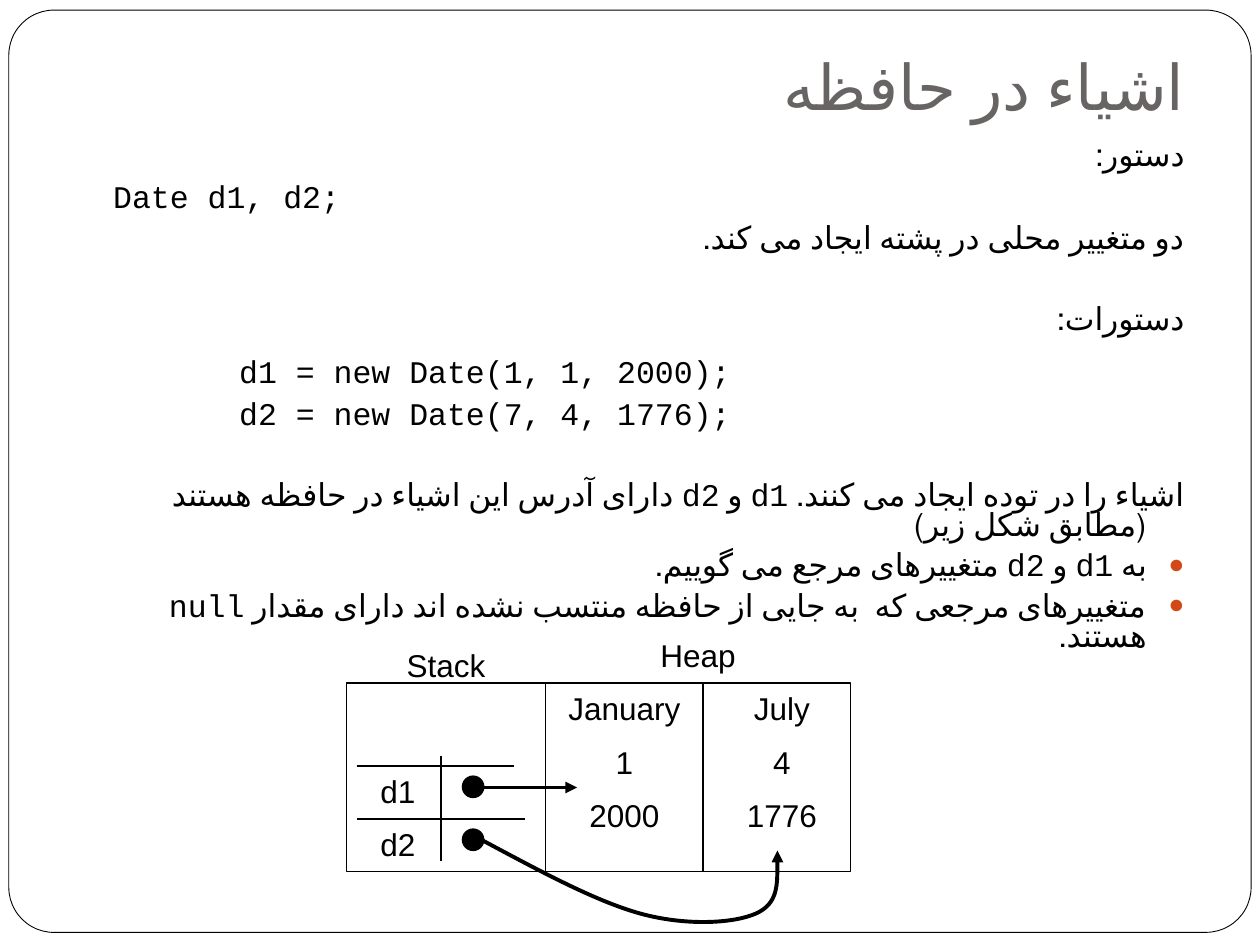
from dataclasses import dataclass

from lxml.etree import SubElement
from pptx import Presentation
from pptx.dml.color import RGBColor
from pptx.enum.lang import MSO_LANGUAGE_ID
from pptx.enum.shapes import MSO_CONNECTOR, MSO_SHAPE
from pptx.enum.text import MSO_ANCHOR, PP_ALIGN
from pptx.oxml.ns import qn
from pptx.util import Inches, Pt


@dataclass(frozen=True)
class Theme:
    ink: str = "000000"
    paper: str = "FFFFFF"
    title: str = "696464"
    accent: str = "D34817"
    sans: str = "Arial"
    mono: str = "Courier New"
    title_size: float = 36
    text_size: float = 18
    frame: float = 0.5
    thin: float = 0.75
    thick: float = 2.25


THEME = Theme()

# Content
TITLE = "اشیاء در حافظه"
GAP, SECTION_GAP = 5.8, 28.8
PERSIAN = dict(rtl=True, align=PP_ALIGN.RIGHT, margin=0.3, indent=-0.3,
               line_spacing=0.8, before=GAP)
CODE = dict(font=THEME.mono, line_spacing=0.8, before=7)
MIXED = {**PERSIAN, "font": THEME.mono}
BODY = [
    ("دستور:", PERSIAN),
    ("Date d1, d2;", {**CODE, "margin": 0.3}),
    ("دو متغییر محلی در پشته ایجاد می کند.", PERSIAN),
    ("دستورات:", {**PERSIAN, "before": SECTION_GAP}),
    ("d1 = new Date(1, 1, 2000);", {**CODE, "margin": 1.3, "before": 13}),
    ("d2 = new Date(7, 4, 1776);", {**CODE, "margin": 1.3}),
    ("اشیاء را در توده ایجاد می کنند. d1 و d2 دارای آدرس این اشیاء در حافظه هستند (مطابق شکل زیر)",
     {**MIXED, "before": SECTION_GAP}),
    ("به d1 و d2 متغییرهای مرجع می گوییم.", {**MIXED, "bullet": "●"}),
    ("متغییرهای مرجعی که  به جایی از حافظه منتسب نشده اند دارای مقدار null هستند.",
     {**MIXED, "bullet": "●"}),
]
VARIABLES = ["d1", "d2"]
HEAP_OBJECTS = [["January", "1", "2000"], ["July", "4", "1776"]]

# Memory diagram geometry, in inches
TOP, HEIGHT = 5.42, 1.5
STACK_LEFT, STACK_WIDTH = 2.75, 1.58
HEAP_LEFT, HEAP_WIDTH = 4.33, 2.42
OBJECT_WIDTH = 1.25
ROW_TOP, ROW_HEIGHT = 6.08, 0.42
DOT = 0.17
CURVE = [(3.83, 6.67), (4.28, 6.91), (4.72, 7.15), (5.08, 7.25),
         (5.44, 7.35), (5.82, 7.33), (6, 7.25),
         (6.18, 7.17), (6.17, 6.96), (6.17, 6.75)]

presentation = Presentation()
presentation.slide_width, presentation.slide_height = Inches(10), Inches(7.5)
slide = presentation.slides.add_slide(presentation.slide_layouts[6])
shapes = slide.shapes


def color(value):
    return RGBColor.from_string(value)


def write(paragraph, text, *, font=THEME.sans, size=THEME.text_size,
          ink=THEME.ink, align=PP_ALIGN.LEFT, rtl=False, margin=0, indent=0,
          line_spacing=None, before=0, bullet=None):
    run = paragraph.add_run()
    run.text = text
    run.font.size, run.font.name = Pt(size), font
    run.font.color.rgb = color(ink)
    paragraph.alignment = align
    paragraph.line_spacing = line_spacing
    paragraph.space_before = Pt(before)
    properties = paragraph._p.get_or_add_pPr()
    properties.set("marL", str(Inches(margin)))
    properties.set("indent", str(Inches(indent)))
    if rtl:
        properties.set("rtl", "1")
        run.font.language_id = MSO_LANGUAGE_ID.FARSI
    if bullet:
        SubElement(SubElement(properties, qn("a:buClr")), qn("a:srgbClr"), val=THEME.accent)
        SubElement(properties, qn("a:buSzPct"), val="85000")
        SubElement(properties, qn("a:buFont"), typeface=THEME.sans)
        SubElement(properties, qn("a:buChar"), char=bullet)


def text_box(left, top, width, height, lines, anchor=MSO_ANCHOR.TOP):
    """Place a box whose lines are (text, format) pairs."""
    frame = shapes.add_textbox(*map(Inches, (left, top, width, height))).text_frame
    frame.word_wrap = True
    frame.vertical_anchor = anchor
    for index, (text, style) in enumerate(lines):
        paragraph = frame.add_paragraph() if index else frame.paragraphs[0]
        write(paragraph, text, **style)
    return frame


def outline(shape, weight, arrow=False):
    shape.line.color.rgb = color(THEME.ink)
    shape.line.width = Pt(weight)
    if arrow:
        SubElement(shape.line._get_or_add_ln(), qn("a:tailEnd"), type="triangle")


def add_outlined(kind, left, top, width, height, fill=None, weight=THEME.thin):
    shape = shapes.add_shape(kind, *map(Inches, (left, top, width, height)))
    shape.shadow.inherit = False
    if fill:
        shape.fill.solid()
        shape.fill.fore_color.rgb = color(fill)
    else:
        shape.fill.background()
    outline(shape, weight)
    return shape


def add_line(x1, y1, x2, y2, weight=THEME.thin, arrow=False):
    line = shapes.add_connector(MSO_CONNECTOR.STRAIGHT, *map(Inches, (x1, y1, x2, y2)))
    outline(line, weight, arrow)
    SubElement(line._element.spPr, qn("a:effectLst"))


def add_curve_arrow(points):
    """Draw a Bezier chain: a start point, then triples of control points."""
    start, *rest = [(Inches(x), Inches(y)) for x, y in points]
    builder = shapes.build_freeform(*start)
    builder.add_line_segments(rest, close=False)
    curve = builder.convert_to_shape()
    curve.shadow.inherit = False
    curve.fill.background()
    outline(curve, THEME.thick, arrow=True)
    route = next(curve._element.iter(qn("a:moveTo"))).getparent()
    segments = route.findall(qn("a:lnTo"))
    for first in range(0, len(segments), 3):
        bezier = SubElement(route, qn("a:cubicBezTo"))
        for segment in segments[first:first + 3]:
            bezier.append(segment[0])
            route.remove(segment)


# Slide frame, title and body
border = add_outlined(MSO_SHAPE.ROUNDED_RECTANGLE, 0.07, 0.08, 9.86, 7.32,
                      fill=THEME.paper, weight=THEME.frame)
border.adjustments[0] = 0.049
title_style = dict(size=THEME.title_size, ink=THEME.title, align=PP_ALIGN.RIGHT, rtl=True)
title = text_box(1, 0.3, 8.5, 0.78, [(TITLE, title_style)], MSO_ANCHOR.BOTTOM)
title.margin_bottom = Inches(0.1)
text_box(0.5, 1.08, 9, 3.83, BODY)

# Stack and heap areas
centered = dict(align=PP_ALIGN.CENTER)
for name, left, width, label_top in [("Stack", STACK_LEFT, STACK_WIDTH, 5.08),
                                     ("Heap", HEAP_LEFT, HEAP_WIDTH, 5)]:
    add_outlined(MSO_SHAPE.RECTANGLE, left, TOP, width, HEIGHT)
    text_box(left, label_top, width, 0.4, [(name, centered)])

# Stack variables
add_line(3.5, 6, 3.5, 6.83)
for index, (name, line_end) in enumerate(zip(VARIABLES, (4.08, 4.17))):
    row = ROW_TOP + index * ROW_HEIGHT
    add_line(2.83, row, line_end, row)
    text_box(2.92, row, 0.67, 0.4, [(name, {})])
    add_outlined(MSO_SHAPE.OVAL, 3.67, row + 0.08, DOT, DOT, fill=THEME.ink)

# Heap objects
for index, fields in enumerate(HEAP_OBJECTS):
    lines = [(field, {**centered, "before": 9 if row else 0})
             for row, field in enumerate(fields)]
    text_box(HEAP_LEFT + index * OBJECT_WIDTH, TOP, OBJECT_WIDTH, 1.3, lines)
divider = HEAP_LEFT + OBJECT_WIDTH
add_line(divider, TOP, divider, TOP + HEIGHT)

# References from stack to heap
add_line(3.75, 6.25, 4.58, 6.25, weight=THEME.thick, arrow=True)
add_curve_arrow(CURVE)

presentation.save("out.pptx")
